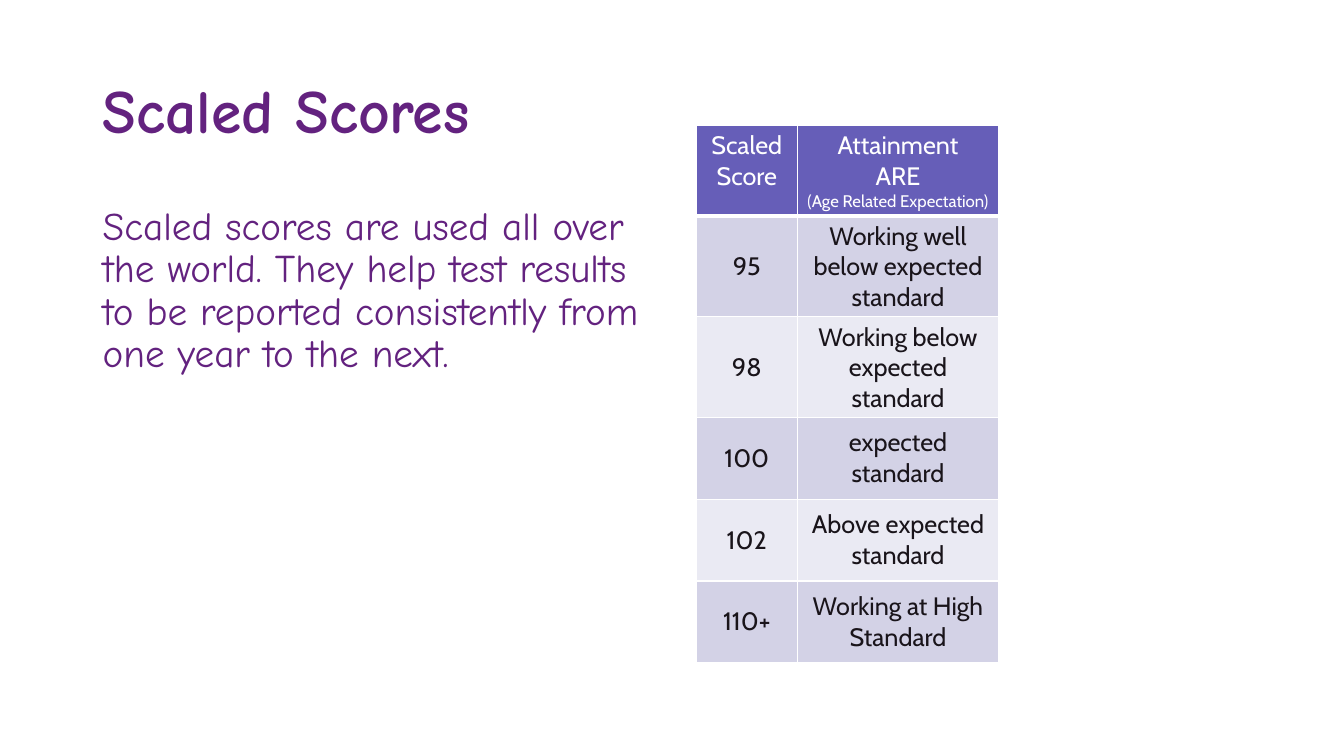
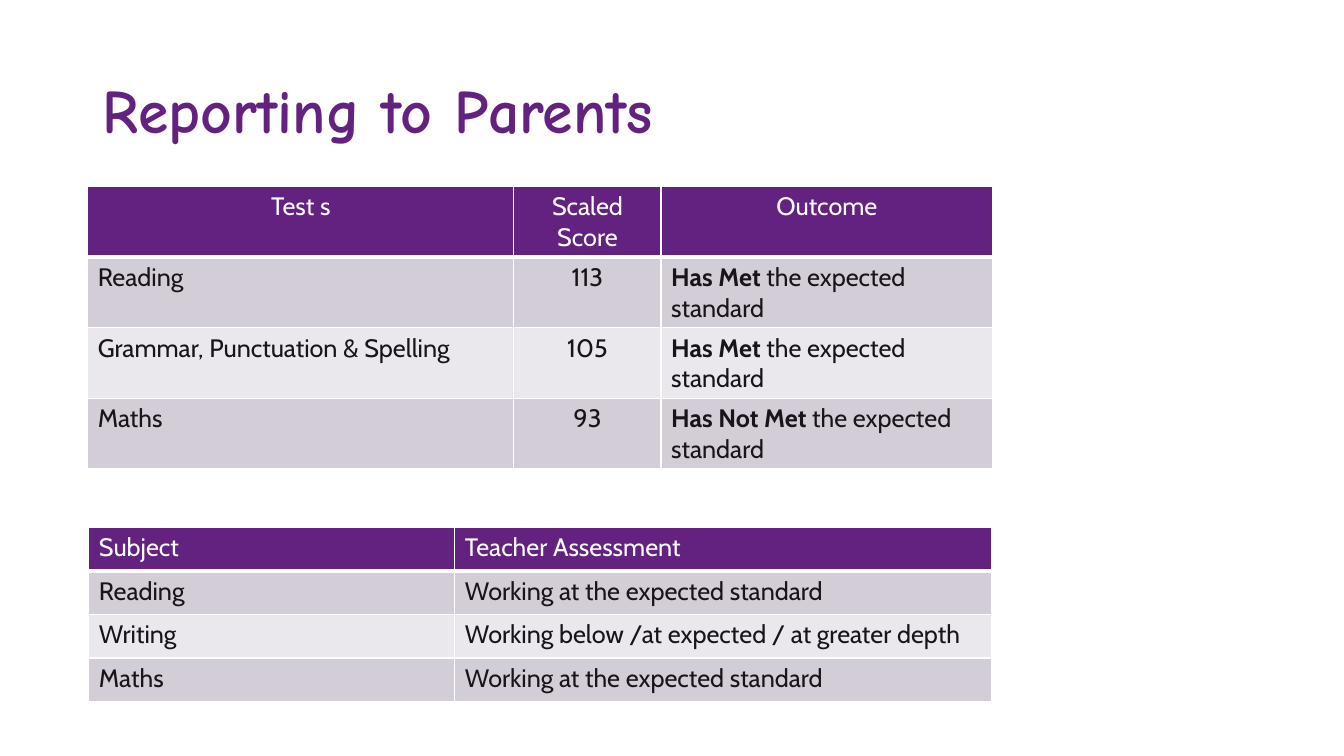
from lxml import etree
from pptx import Presentation
from pptx.dml.color import RGBColor
from pptx.enum.text import MSO_ANCHOR, PP_ALIGN
from pptx.oxml.ns import qn
from pptx.util import Cm, Pt

LEFT, CENTER = PP_ALIGN.LEFT, PP_ALIGN.CENTER
TOP, MIDDLE = MSO_ANCHOR.TOP, MSO_ANCHOR.MIDDLE
COLOURS = {
    "purple": "63227F",
    "violet": "665EB8",
    "ink": "19141A",
    "white": "FFFFFF",
    "violet dark band": "D3D2E6",
    "violet light band": "EAEAF3",
    "purple dark band": "D3CDD8",
    "purple light band": "EAE8EC",
}
HEADING_FONT, TABLE_FONT = "Comic Neue", "Cabin"
TEXT_LEFT = 2.34


def write(frame, paragraphs, face, colour, align=LEFT, line_spacing=None):
    for index, runs in enumerate(paragraphs):
        para = frame.paragraphs[0] if index == 0 else frame.add_paragraph()
        para.alignment = align
        para.line_spacing = line_spacing
        for text, size, bold in runs:
            span = para.add_run()
            span.text = text
            span.font.name = face
            span.font.size = Pt(size)
            span.font.bold = bold
            span.font.color.rgb = RGBColor.from_string(COLOURS[colour])


def add_grid(page, left, top, widths, heights, rows, theme, aligns, header_align, anchor):
    table = page.shapes.add_table(
        len(rows), len(widths), Cm(left), Cm(top), Cm(sum(widths)), Cm(sum(heights))
    ).table
    for column, width in zip(table.columns, widths):
        column.width = Cm(width)
    for row_index, row in enumerate(rows):
        table.rows[row_index].height = Cm(heights[row_index])
        header = row_index == 0
        band = "dark" if row_index % 2 else "light"
        fill = theme if header else f"{theme} {band} band"
        for column_index, content in enumerate(row):
            cell = table.cell(row_index, column_index)
            cell.vertical_anchor = TOP if header else anchor
            properties = cell._tc.get_or_add_tcPr()
            for side in ("lnL", "lnR", "lnT", "lnB"):
                width = Pt(3 if header and side == "lnB" else 1)
                line = etree.SubElement(properties, qn(f"a:{side}"), w=str(width))
                solid = etree.SubElement(line, qn("a:solidFill"))
                etree.SubElement(solid, qn("a:srgbClr"), val=COLOURS["white"])
            cell.fill.solid()
            cell.fill.fore_color.rgb = RGBColor.from_string(COLOURS[fill])
            paragraphs = [[(content, 18, False)]] if isinstance(content, str) else content
            write(
                cell.text_frame, paragraphs, TABLE_FONT,
                "white" if header else "ink",
                header_align if header else aligns[column_index],
            )


deck = Presentation()
deck.slide_width, deck.slide_height = Cm(33.87), Cm(19.05)
blank = deck.slide_layouts[6]

pages = []
for title in ("Scaled Scores", "Reporting to Parents"):
    page = deck.slides.add_slide(blank)
    box = page.shapes.add_textbox(Cm(TEXT_LEFT), Cm(1.02), Cm(22.83), Cm(3.68))
    box.text_frame.word_wrap = True
    box.text_frame.vertical_anchor = MIDDLE
    write(box.text_frame, [[(title, 44, True)]], HEADING_FONT, "purple", line_spacing=0.9)
    pages.append(page)
scores_page, parents_page = pages

body = scores_page.shapes.add_textbox(Cm(TEXT_LEFT), Cm(5.08), Cm(14.6), Cm(12.09))
body.text_frame.word_wrap = True
explanation = (
    "Scaled scores are used all over the world. They help test results "
    "to be reported consistently from one year to the next."
)
write(body.text_frame, [[(explanation, 28, False)]], HEADING_FONT, "purple", line_spacing=0.9)

attainment_heading = [
    [("Attainment", 18, False)],
    [("ARE", 18, False)],
    [("(Age Related Expectation)", 12, False)],
]
score_rows = [
    ("Scaled Score", attainment_heading),
    ("95", "Working well below expected standard"),
    ("98", "Working below expected standard"),
    ("100", "expected standard"),
    ("102", "Above expected standard"),
    ("110+", "Working at High Standard"),
]
add_grid(
    scores_page, 17.55, 3.15, (2.54, 5.08), [2.06] * 6, score_rows,
    "violet", (CENTER, CENTER), CENTER, MIDDLE,
)

test_rows = [("Test s", "Scaled Score", "Outcome")]
for subject, score, verdict in (
    ("Reading", "113", "Has Met"),
    ("Grammar, Punctuation & Spelling", "105", "Has Met"),
    ("Maths", "93", "Has Not Met"),
):
    outcome = [[(verdict, 18, True), (" the expected standard", 18, False)]]
    test_rows.append((subject, score, outcome))
add_grid(
    parents_page, 2.21, 4.7, (10.74, 3.71, 8.36), [1.27] + [1.78] * 3, test_rows,
    "purple", (LEFT, CENTER, LEFT), CENTER, TOP,
)

assessment_rows = [
    ("Subject", "Teacher Assessment"),
    ("Reading", "Working at the expected standard"),
    ("Writing", "Working below /at expected / at greater depth"),
    ("Maths", "Working at the expected standard"),
]
add_grid(
    parents_page, 2.24, 13.28, (9.22, 13.54), [1.1] * 4, assessment_rows,
    "purple", (LEFT, LEFT), LEFT, TOP,
)

deck.save("out.pptx")
